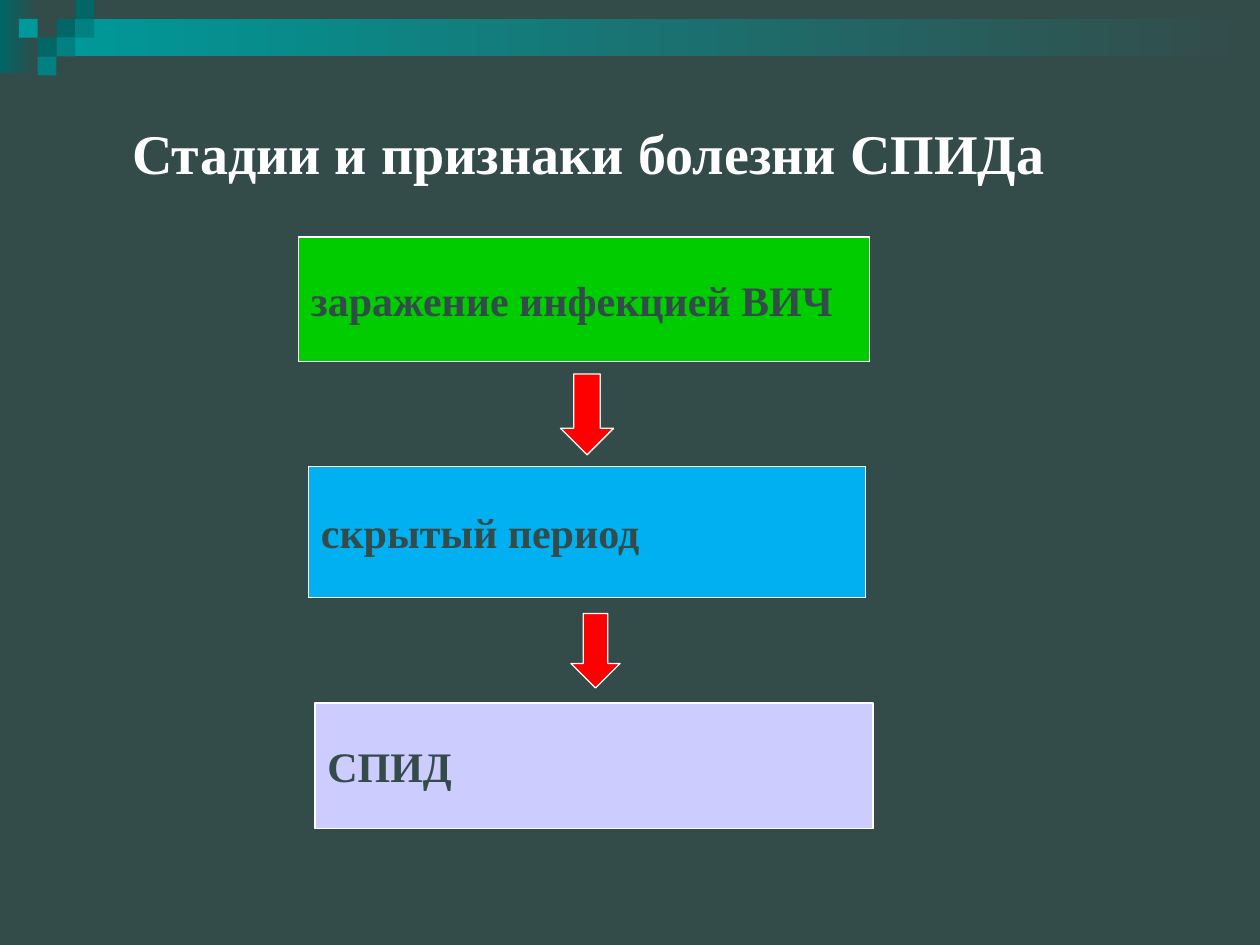
"""Build a slide showing the stages of AIDS as three boxes joined by down arrows."""
import pptx
import pptx.dml.color
import pptx.enum.shapes
import pptx.enum.text
import pptx.util

Cm = pptx.util.Cm
Pt = pptx.util.Pt
SHAPES = pptx.enum.shapes.MSO_SHAPE
COLORS = {
    "background": "334B49",
    "dark teal": "006666",
    "teal": "008080",
    "bright teal": "009999",
    "white": "FFFFFF",
    "green": "00CC00",
    "blue": "00B0F0",
    "lilac": "CCCCFF",
    "red": "FF0000",
}


def rgb(name):
    return pptx.dml.color.RGBColor.from_string(COLORS[name])


def add_figure(kind, box, fill, outline=None):
    figure = slide.shapes.add_shape(kind, *map(Cm, box))
    figure.shadow.inherit = False
    figure.fill.solid()
    figure.fill.fore_color.rgb = rgb(fill)
    if outline:
        figure.line.color.rgb = rgb(outline)
        figure.line.width = Pt(0.75)
    else:
        figure.line.fill.background()
    return figure


presentation = pptx.Presentation()
presentation.slide_width = Cm(25.4)
presentation.slide_height = Cm(19.05)
slide = presentation.slides.add_slide(presentation.slide_layouts[5])
slide.background.fill.solid()
slide.background.fill.fore_color.rgb = rgb("background")

bands = [
    ((0, 0, 0.79, 1.47), "dark teal"),
    ((1.14, 0.38, 24.26, 0.76), "bright teal"),
]
for box, start in bands:
    band = add_figure(SHAPES.RECTANGLE, box, start)
    band.fill.gradient()
    band.fill.gradient_angle = 0
    for stop, color, position in zip(band.fill.gradient_stops, (start, "background"), (0, 1)):
        stop.color.rgb = rgb(color)
        stop.position = position

tile = 0.38
mosaic = [
    (3, 1, "dark teal"),
    (4, 0, "dark teal"),
    (4, 1, "teal"),
    (2, 2, "dark teal"),
    (1, 1, "bright teal"),
    (3, 2, "teal"),
    (2, 3, "teal"),
]
for column, row, color in mosaic:
    add_figure(SHAPES.RECTANGLE, (column * tile, row * tile, tile, tile), color)

heading = slide.shapes.title
heading.left, heading.top, heading.width, heading.height = map(Cm, (2.41, 2.26, 21.67, 1.63))
heading.text_frame.text = "Стадии и признаки болезни СПИДа"
heading.text_frame.auto_size = pptx.enum.text.MSO_AUTO_SIZE.NONE
heading.text_frame.vertical_anchor = pptx.enum.text.MSO_ANCHOR.TOP

stages = [
    ("заражение инфекцией ВИЧ", (6.02, 4.78, 11.51, 2.51), "green"),
    ("скрытый период", (6.22, 9.4, 11.23, 2.64), "blue"),
    ("СПИД", (6.35, 14.17, 11.25, 2.54), "lilac"),
]
labels = [(heading, 32, "white")]
for wording, box, color in stages:
    stage = add_figure(SHAPES.RECTANGLE, box, color, "white")
    stage.text_frame.text = wording
    stage.text_frame.vertical_anchor = pptx.enum.text.MSO_ANCHOR.MIDDLE
    labels.append((stage, 24, "background"))

for label, size, color in labels:
    paragraph = label.text_frame.paragraphs[0]
    paragraph.alignment = pptx.enum.text.PP_ALIGN.LEFT
    paragraph.font.name = "Times New Roman"
    paragraph.font.size = Pt(size)
    paragraph.font.bold = True
    paragraph.font.color.rgb = rgb(color)

for box in [(11.3, 7.54, 1.07, 1.63), (11.51, 12.37, 0.99, 1.5)]:
    add_figure(SHAPES.DOWN_ARROW, box, "red", "white")

presentation.save("out.pptx")
